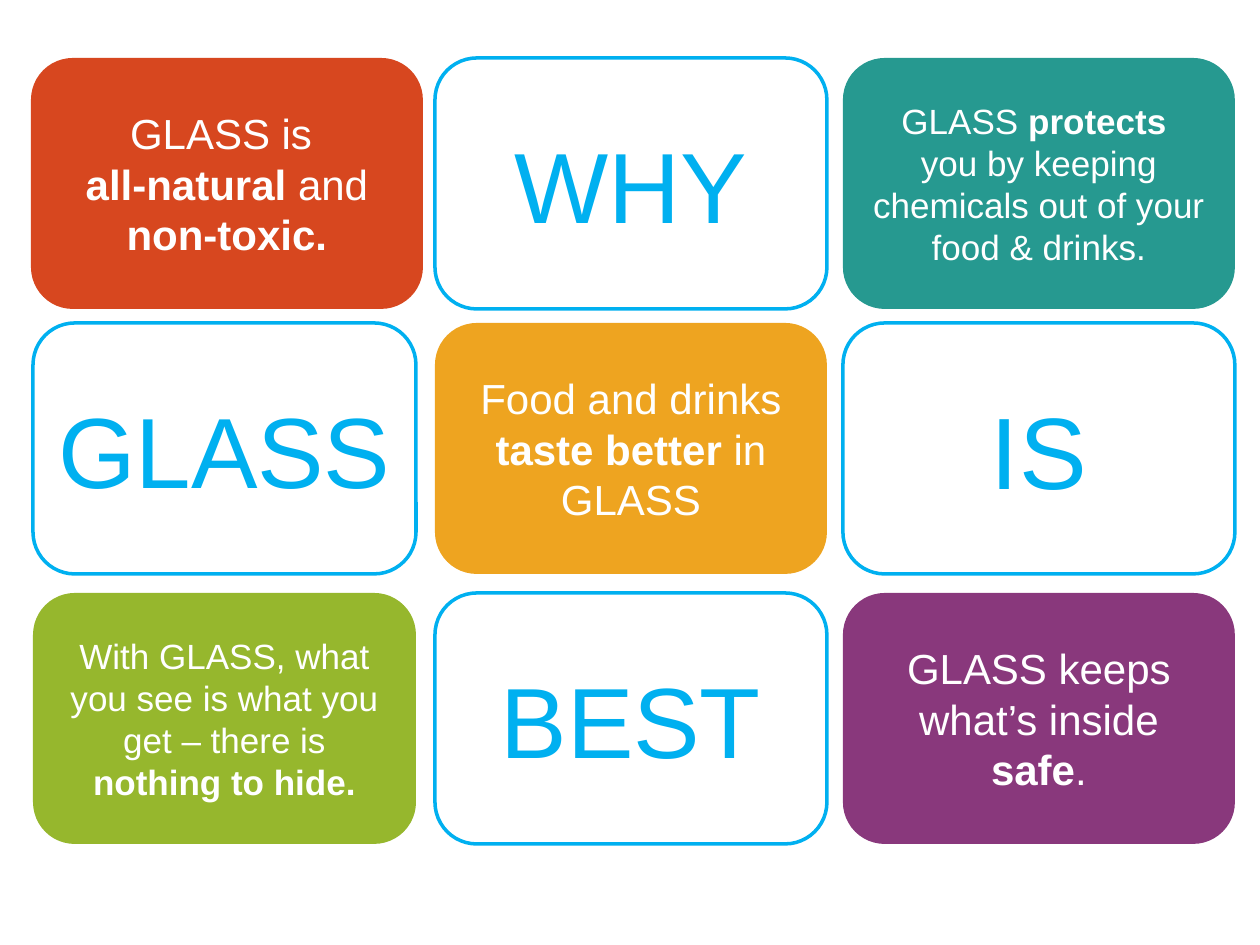
from pptx import Presentation
from pptx.dml.color import RGBColor
from pptx.enum.shapes import MSO_SHAPE as Shape
from pptx.enum.text import MSO_ANCHOR as Anchor, PP_ALIGN as Align
from pptx.util import Emu, Pt

PX = 914400 // 126

WHITE = RGBColor(0xFF, 0xFF, 0xFF)
BLUE = RGBColor(0x00, 0xB0, 0xF0)
RED = RGBColor(0xD7, 0x47, 0x1F)
TEAL = RGBColor(0x26, 0x99, 0x90)
AMBER = RGBColor(0xEE, 0xA4, 0x20)
GREEN = RGBColor(0x96, 0xB7, 0x2D)
PURPLE = RGBColor(0x89, 0x38, 0x7C)

COLUMN_LEFTS = (33, 435, 843)
ROW_TOPS = (58, 323, 593)
CARD_WIDTH, NARROW_WIDTH, CARD_HEIGHT = 392, 383, 251

# Cards in reading order: fill, text size, paragraphs of (text, bold) runs
cards = [
    (RED, 24, [[("GLASS is ", False)],
               [("all-natural", True), (" and ", False), ("non-toxic.", True)]]),
    (WHITE, 57, [[("WHY", False)]]),
    (TEAL, 20, [[("GLASS ", False), ("protects ", True), ("\n", False),
                 ("you by keeping chemicals out of your food & drinks.", False)]]),
    (WHITE, 57, [[("GLASS", False)]]),
    (AMBER, 24, [[("Food and drinks ", False), ("taste better ", True),
                  ("in GLASS", False)]]),
    (WHITE, 58, [[("IS", False)]]),
    (GREEN, 20, [[("With GLASS, what you see is what you get – there is ", False),
                  ("nothing to hide.", True)]]),
    (WHITE, 57, [[("BEST", False)]]),
    (PURPLE, 24, [[("GLASS keeps what’s inside ", False), ("safe", True),
                   (".", False)]]),
]

prs = Presentation()
prs.slide_width, prs.slide_height = Emu(1260 * PX), Emu(945 * PX)
slide = prs.slides.add_slide(prs.slide_layouts[6])

for index, (fill, size, paragraphs) in enumerate(cards):
    row, column = divmod(index, 3)
    left = COLUMN_LEFTS[column]
    width = CARD_WIDTH if column else NARROW_WIDTH
    if index == 0:
        left, width = 31, CARD_WIDTH
    card = slide.shapes.add_shape(
        Shape.ROUNDED_RECTANGLE,
        *(Emu(n * PX) for n in (left, ROW_TOPS[row], width, CARD_HEIGHT)))
    card.shadow.inherit = False
    card.fill.solid()
    card.fill.fore_color.rgb = fill
    if fill == WHITE:
        card.line.color.rgb = BLUE
        card.line.width = Pt(2)
    else:
        card.line.fill.background()

    frame = card.text_frame
    frame.word_wrap = True
    frame.vertical_anchor = Anchor.MIDDLE
    for number, runs in enumerate(paragraphs):
        paragraph = frame.add_paragraph() if number else frame.paragraphs[0]
        paragraph.alignment = Align.CENTER
        for text, bold in runs:
            if text == "\n":
                paragraph.add_line_break()
                continue
            run = paragraph.add_run()
            run.text = text
            for name, value in {"name": "Arial", "size": Pt(size), "bold": bold}.items():
                setattr(run.font, name, value)
            run.font.color.rgb = BLUE if fill == WHITE else WHITE

prs.save("out.pptx")
